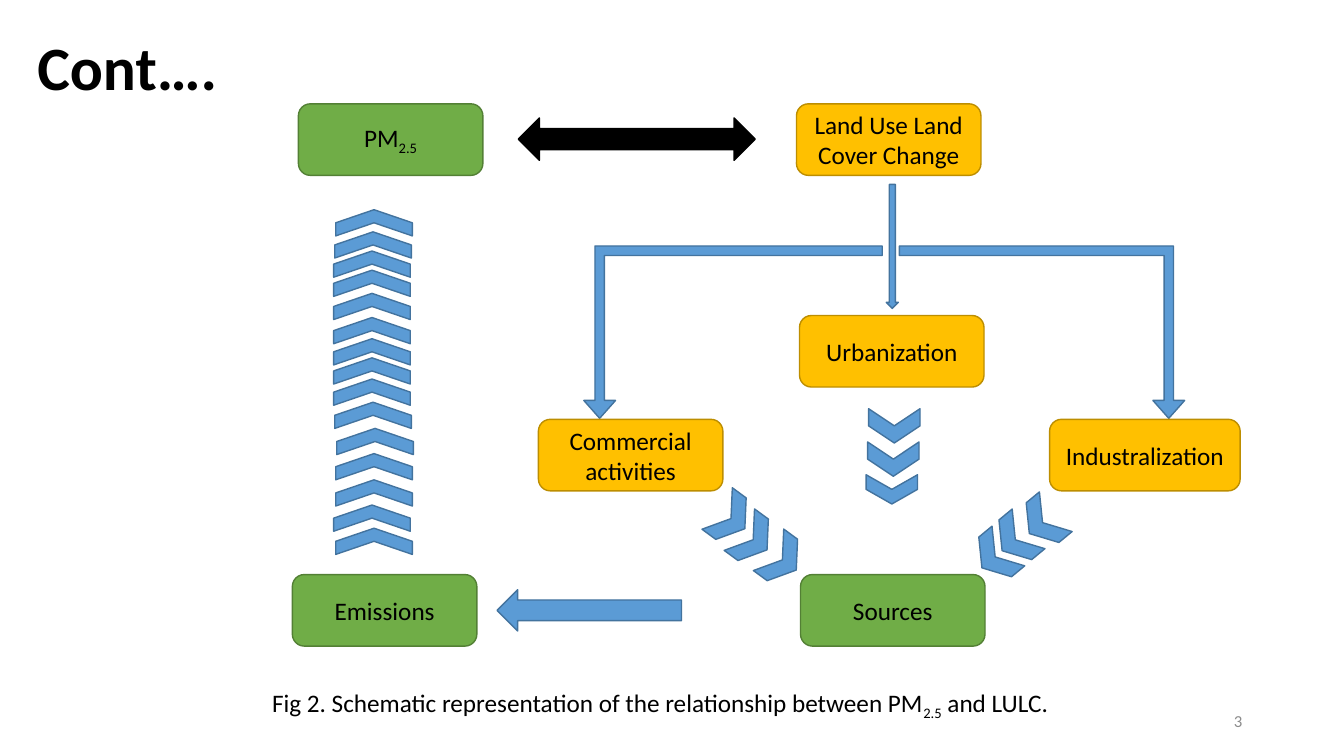
from lxml import etree
from pptx import Presentation
from pptx.dml.color import RGBColor
from pptx.enum.shapes import MSO_SHAPE
from pptx.enum.text import MSO_ANCHOR, PP_ALIGN
from pptx.oxml.ns import qn
from pptx.util import Inches, Pt

BOX = MSO_SHAPE.FLOWCHART_ALTERNATE_PROCESS
CHEVRON = MSO_SHAPE.CHEVRON
BENT_ARROW = MSO_SHAPE.BENT_UP_ARROW
LEFT, CENTER, RIGHT = PP_ALIGN.LEFT, PP_ALIGN.CENTER, PP_ALIGN.RIGHT
MIDDLE = MSO_ANCHOR.MIDDLE

BLUE = ("5B9BD5", "43739E")
GREEN = ("70AD47", "538035")
AMBER = ("FFC000", "BD8E00")
BLACK = ("000000", "000000")

deck = Presentation()
deck.slide_width, deck.slide_height = Inches(13.33), Inches(7.5)
deck.element.set("firstSlideNum", "3")
page = deck.slides.add_slide(deck.slide_layouts[5])


def add_figure(kind, bounds, colours, rotation=0):
    """Add a filled, outlined shape; colours is a (fill, line) pair."""
    figure = page.shapes.add_shape(kind, *map(Inches, bounds))
    figure.shadow.inherit = False
    figure.fill.solid()
    figure.fill.fore_color.rgb = RGBColor.from_string(colours[0])
    figure.line.color.rgb = RGBColor.from_string(colours[1])
    figure.line.width = Pt(1)
    figure.rotation = rotation
    return figure


def write(para, pieces, size):
    """Fill a paragraph with text pieces; every second piece is a subscript."""
    for index, piece in enumerate(pieces):
        span = para.add_run()
        span.text = piece
        if index % 2:
            span.font._element.set("baseline", "-25000")
    para.font.name = "Calibri"
    para.font.size = Pt(size)
    para.font.color.rgb = RGBColor.from_string("000000")


# Title
title = page.shapes.title
title.left, title.top, title.width, title.height = map(Inches, (0.27, 0.23, 11.5, 0.94))
title.text_frame.vertical_anchor = MIDDLE
heading = title.text_frame.paragraphs[0]
heading.alignment = LEFT
heading.line_spacing = 0.9
write(heading, ["Cont…."], 44)
heading.font.bold = True

# Straight arrows
add_figure(MSO_SHAPE.LEFT_RIGHT_ARROW, (5.14, 1.17, 2.35, 0.42), BLACK)
add_figure(MSO_SHAPE.DOWN_ARROW, (8.79, 1.83, 0.12, 1.23), BLUE)
add_figure(MSO_SHAPE.LEFT_ARROW, (4.93, 5.85, 1.83, 0.41), BLUE)

# Bent arrows from land use to the outer activities
for left, width, flipped in ((5.79, 2.96, False), (8.92, 2.83, True)):
    arrow = add_figure(BENT_ARROW, (left, 2.44, width, 1.71), BLUE, 180)
    for index, share in enumerate((0.055, 0.092, 0.104)):
        arrow.adjustments[index] = share
    if flipped:
        arrow.element.spPr.find(qn("a:xfrm")).set("flipH", "1")

# Chevrons from the activities to the sources
source_chevrons = (
    (36.2, ((7.08, 4.89), (7.3, 5.1), (7.59, 5.3))),
    (140.5, ((10.17, 4.93), (9.9, 5.1), (9.7, 5.27))),
    (90, ((8.7, 3.97), (8.69, 4.3), (8.7, 4.6))),
)
for rotation, corners in source_chevrons:
    for left, top in corners:
        width = 0.29 if top == 4.6 else 0.34
        add_figure(CHEVRON, (left, top, width, 0.51), BLUE, rotation)

# Chevron column from the emissions up to PM2.5
column_chevrons = (
    (3.58, 1.83), (3.57, 2.05), (3.56, 2.24), (3.56, 2.43), (3.56, 2.66),
    (3.56, 2.9), (3.56, 3.11), (3.56, 3.3), (3.56, 3.51), (3.57, 3.74),
    (3.59, 4), (3.58, 4.25), (3.58, 4.51), (3.56, 4.76), (3.58, 4.99),
)
for left, top in column_chevrons:
    add_figure(CHEVRON, (left, top, 0.26, 0.76), BLUE, 270)

# Labelled boxes
boxes = (
    (2.96, 1.03, 1.83, GREEN, ["PM", "2.5"]),
    (7.9, 1.03, 1.83, AMBER, ["Land Use Land Cover Change"]),
    (7.93, 3.13, 1.83, AMBER, ["Urbanization"]),
    (5.34, 4.16, 1.83, AMBER, ["Commercial activities"]),
    (10.41, 4.16, 1.89, AMBER, ["Industralization"]),
    (2.9, 5.7, 1.83, GREEN, ["Emissions"]),
    (7.94, 5.7, 1.83, GREEN, ["Sources"]),
)
for left, top, width, colours, label in boxes:
    box = add_figure(BOX, (left, top, width, 0.71), colours)
    box.text_frame.word_wrap = True
    box.text_frame.vertical_anchor = MIDDLE
    para = box.text_frame.paragraphs[0]
    para.alignment = CENTER
    write(para, label, 18)

# Caption
caption = page.shapes.add_textbox(*map(Inches, (2.6, 6.77, 8.75, 0.61)))
caption.text_frame.word_wrap = True
write(caption.text_frame.paragraphs[0],
      ["Fig 2. Schematic representation of the relationship between PM",
       "2.5", " and LULC."], 18)

# Slide number as a live field
number = page.shapes.add_textbox(*map(Inches, (9.42, 6.95, 3, 0.4)))
number.text_frame.word_wrap = True
number.text_frame.vertical_anchor = MIDDLE
para = number.text_frame.paragraphs[0]
para.alignment = RIGHT
field = etree.SubElement(para._p, qn("a:fld"), type="slidenum",
                         id="{B6F15528-21DE-4FAA-801E-634DDDAF4B2B}")
properties = etree.SubElement(field, qn("a:rPr"), lang="en-US", sz="1200")
fill = etree.SubElement(properties, qn("a:solidFill"))
etree.SubElement(fill, qn("a:srgbClr"), val="8C8C8C")
etree.SubElement(properties, qn("a:latin"), typeface="Calibri")
etree.SubElement(field, qn("a:t")).text = "3"

deck.save("out.pptx")
